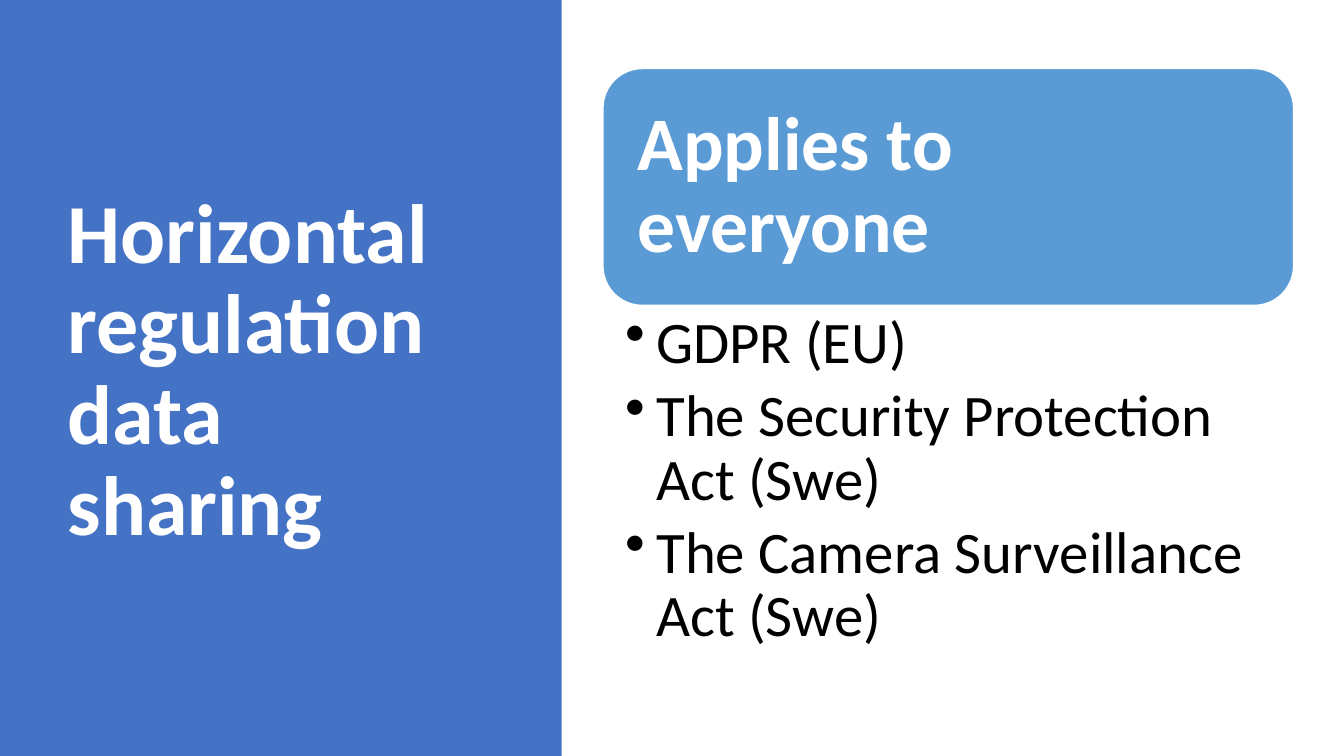
from lxml.etree import SubElement
from pptx import Presentation
from pptx.dml.color import RGBColor
from pptx.enum.shapes import MSO_SHAPE
from pptx.enum.text import MSO_ANCHOR, MSO_AUTO_SIZE, PP_ALIGN
from pptx.oxml.ns import qn
from pptx.util import Inches, Pt

WHITE, BLACK = "FFFFFF", "000000"
PANEL_BLUE, CARD_BLUE = "4472C4", "5B9BD5"


def color(value):
    return RGBColor.from_string(value)


class SlideBuilder:
    font_name = "Calibri"
    line_spacing = 0.9

    def __init__(self, deck):
        self.page = deck.slides.add_slide(deck.slide_layouts[5])

    def shape(self, kind, area, fill, line=None):
        box = self.page.shapes.add_shape(kind, *map(Inches, area))
        box.shadow.inherit = False
        box.fill.solid()
        box.fill.fore_color.rgb = color(fill)
        if line:
            box.line.color.rgb = color(line)
            box.line.width = Pt(1)
        else:
            box.line.fill.background()
        return box

    def set_text(self, box, lines, size, ink, bold=False, anchor=MSO_ANCHOR.MIDDLE,
                 insets=(0.1, 0.05, 0.1, 0.05), space_after=0):
        frame = box.text_frame
        frame.text = "\n".join(lines)
        frame.word_wrap = True
        frame.auto_size = MSO_AUTO_SIZE.NONE
        frame.vertical_anchor = anchor
        (frame.margin_left, frame.margin_top,
         frame.margin_right, frame.margin_bottom) = map(Inches, insets)
        for para in frame.paragraphs:
            para.alignment = PP_ALIGN.LEFT
            para.line_spacing = self.line_spacing
            para.space_after = Pt(space_after)
            para.font.name = self.font_name
            para.font.size = Pt(size)
            para.font.bold = bold
            para.font.color.rgb = color(ink)

    def title(self, area, text, size, ink):
        box = self.page.shapes.title
        box.left, box.top, box.width, box.height = map(Inches, area)
        self.set_text(box, [text], size, ink, bold=True)

    def side_panel(self, area, fill):
        panel = self.shape(MSO_SHAPE.RECTANGLE, area, fill)
        # Keep the panel behind the title
        self.page.shapes.title.element.addprevious(panel.element)

    def card(self, area, text, size, fill):
        box = self.shape(MSO_SHAPE.ROUNDED_RECTANGLE, area, fill, line=WHITE)
        self.set_text(box, [text], size, WHITE, bold=True, insets=(0.23,) * 4)

    def bullets(self, area, items, size, ink):
        box = self.page.shapes.add_textbox(*map(Inches, area))
        self.set_text(box, items, size, ink, anchor=MSO_ANCHOR.TOP,
                      insets=(0.22, 0.07, 0.42, 0.07), space_after=7)
        for para in box.text_frame.paragraphs:
            para.level = 1
            properties = para._p.get_or_add_pPr()
            properties.set("marL", str(Inches(0.31)))
            properties.set("indent", str(-Inches(0.31)))
            bullet = SubElement(properties, qn("a:buChar"), char="•")
            properties.find(qn("a:defRPr")).addprevious(bullet)


def main():
    deck = Presentation()
    deck.slide_width, deck.slide_height = Inches(13.33), Inches(7.5)
    builder = SlideBuilder(deck)

    # Title on the left panel
    builder.side_panel((0, 0, 5.57, 7.5), PANEL_BLUE)
    builder.title((0.57, 0.68, 4.16, 6.02), "Horizontal regulation data sharing", 60, WHITE)

    # Heading card with the list of laws
    builder.card((5.98, 0.68, 6.85, 2.35), "Applies to everyone", 54, CARD_BLUE)
    laws = ["GDPR (EU)", "The Security Protection Act (Swe)",
            "The Camera Surveillance Act (Swe)"]
    builder.bullets((5.98, 3.03, 6.85, 3.67), laws, 42, BLACK)

    deck.save("out.pptx")


if __name__ == "__main__":
    main()
